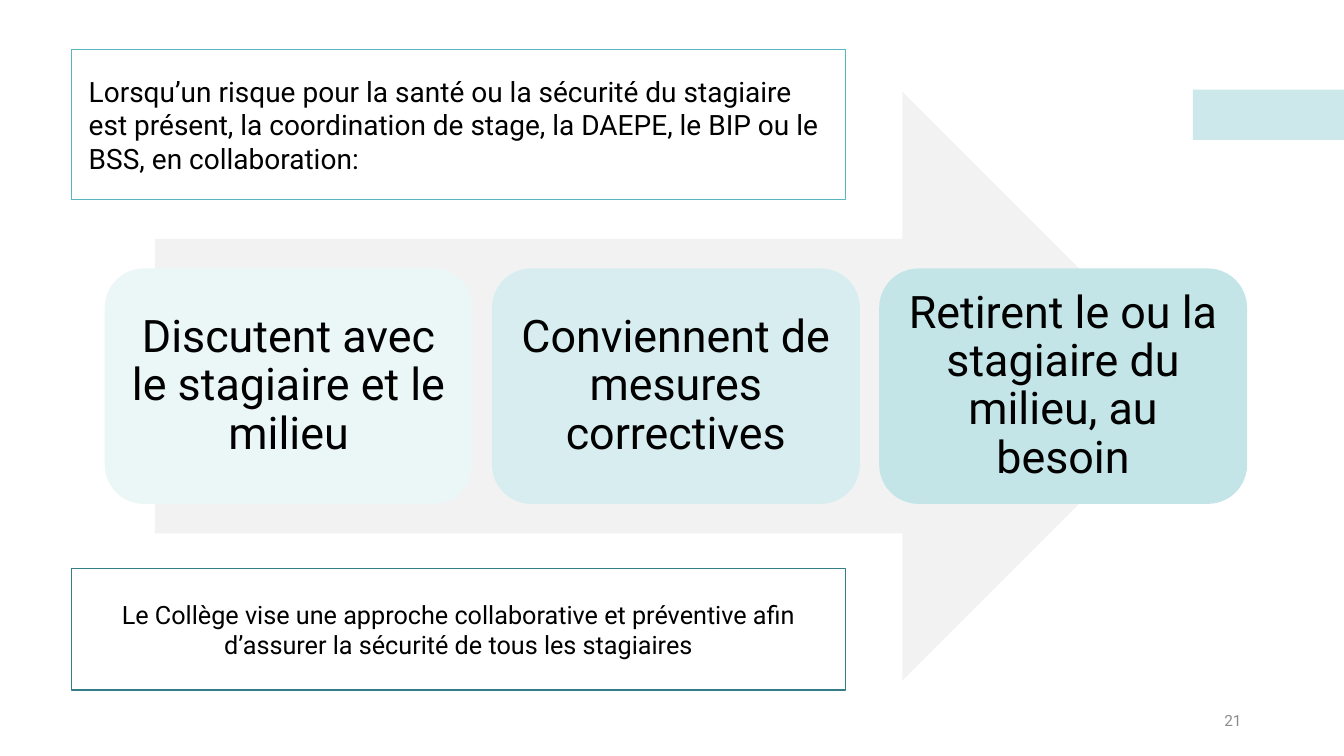
from dataclasses import dataclass

from lxml import etree
from pptx import Presentation
from pptx import util as u
from pptx.dml.color import RGBColor
from pptx.enum import shapes, text
from pptx.oxml import ns

Kind = shapes.MSO_SHAPE
Align = text.PP_ALIGN


@dataclass(frozen=True)
class Theme:
    font: str = "Roboto"
    ink: str = "000000"
    muted: str = "8C8C8C"
    paper: str = "FFFFFF"
    accent: str = "9CD3D9"
    arrow: str = "F2F2F2"
    steps: tuple = ("EBF6F7", "D7EDF0", "C4E5E8")
    intro_line: str = "59B5BF"
    closing_line: str = "347F87"
    step_size: int = 32
    intro_size: int = 20
    closing_size: int = 18
    number_size: int = 11


THEME = Theme()

INTRO = ("Lorsqu’un risque pour la santé ou la sécurité du stagiaire est présent, "
         "la coordination de stage, la DAEPE, le BIP ou le BSS, en collaboration:")
STEPS = ("Discutent avec le stagiaire et le milieu",
         "Conviennent de mesures correctives",
         "Retirent le ou la stagiaire du milieu, au besoin")
CLOSING = ("Le Collège vise une approche collaborative et préventive "
           "afin d’assurer la sécurité de tous les stagiaires")


def add_block(slide, kind, box, fill, line=None):
    """Add a flat preset shape in a (left, top, width, height) box in points."""
    shape = slide.shapes.add_shape(kind, *(u.Pt(length) for length in box))
    shape.shadow.inherit = False
    shape.fill.solid()
    shape.fill.fore_color.rgb = RGBColor.from_string(fill)
    if line:
        shape.line.color.rgb = RGBColor.from_string(line)
        shape.line.width = u.Pt(1)
    else:
        shape.line.fill.background()
    return shape


def write(shape, words, size, color=THEME.ink, align=Align.CENTER,
          inset=(7.2, 3.6), spacing=1.0):
    """Write one paragraph, centred vertically; inset is (sides, top and bottom)."""
    frame = shape.text_frame
    frame.word_wrap = True
    frame.vertical_anchor = text.MSO_ANCHOR.MIDDLE
    frame.margin_left = frame.margin_right = u.Pt(inset[0])
    frame.margin_top = frame.margin_bottom = u.Pt(inset[1])
    paragraph = frame.paragraphs[0]
    paragraph.alignment = align
    paragraph.line_spacing = spacing
    run = paragraph.add_run()
    run.text = words
    run.font.name = THEME.font
    run.font.size = u.Pt(size)
    run.font.color.rgb = RGBColor.from_string(color)


def add_accent(slide, box):
    """Half-transparent band at the right edge."""
    band = add_block(slide, Kind.RECTANGLE, box, THEME.accent)
    color = band.fill._xPr.find(".//" + ns.qn("a:srgbClr"))
    etree.SubElement(color, ns.qn("a:alpha"), val="50000")


def add_page_number(slide, box, number):
    label = slide.shapes.add_textbox(*(u.Pt(length) for length in box))
    write(label, number, THEME.number_size, THEME.muted, Align.RIGHT)


def add_process(slide, box):
    """Wide arrow with a row of step cards across its middle."""
    left, top, width, height = box
    arrow_width = width * 0.912
    add_block(slide, Kind.RIGHT_ARROW,
              (left + (width - arrow_width) / 2, top, arrow_width, height), THEME.arrow)

    gap = 13.8
    card_width = (width - gap * (len(STEPS) - 1)) / len(STEPS)
    card_height = height * 0.4
    card_top = top + (height - card_height) / 2
    for index, (words, fill) in enumerate(zip(STEPS, THEME.steps)):
        card_left = left + index * (card_width + gap)
        card = add_block(slide, Kind.ROUNDED_RECTANGLE,
                         (card_left, card_top, card_width, card_height), fill)
        write(card, words, THEME.step_size, inset=(9.6, 9.6), spacing=0.9)


def add_intro(slide, box):
    panel = add_block(slide, Kind.RECTANGLE, box, THEME.paper, THEME.intro_line)
    write(panel, INTRO, THEME.intro_size, align=Align.LEFT, inset=(12.4, 3.6))


def add_closing(slide, box):
    panel = add_block(slide, Kind.RECTANGLE, box, THEME.paper, THEME.closing_line)
    write(panel, CLOSING, THEME.closing_size)


def main():
    presentation = Presentation()
    presentation.slide_width = u.Pt(960)
    presentation.slide_height = u.Pt(540)
    slide = presentation.slides.add_slide(presentation.slide_layouts[6])

    add_accent(slide, (852, 64, 108, 36))
    add_page_number(slide, (678, 500.4, 216, 28.8), "21")
    add_process(slide, (74.8, 65.6, 816, 420.5))
    add_intro(slide, (51, 35.3, 553, 107.3))
    add_closing(slide, (51, 406, 553, 87))

    presentation.save("out.pptx")


if __name__ == "__main__":
    main()
